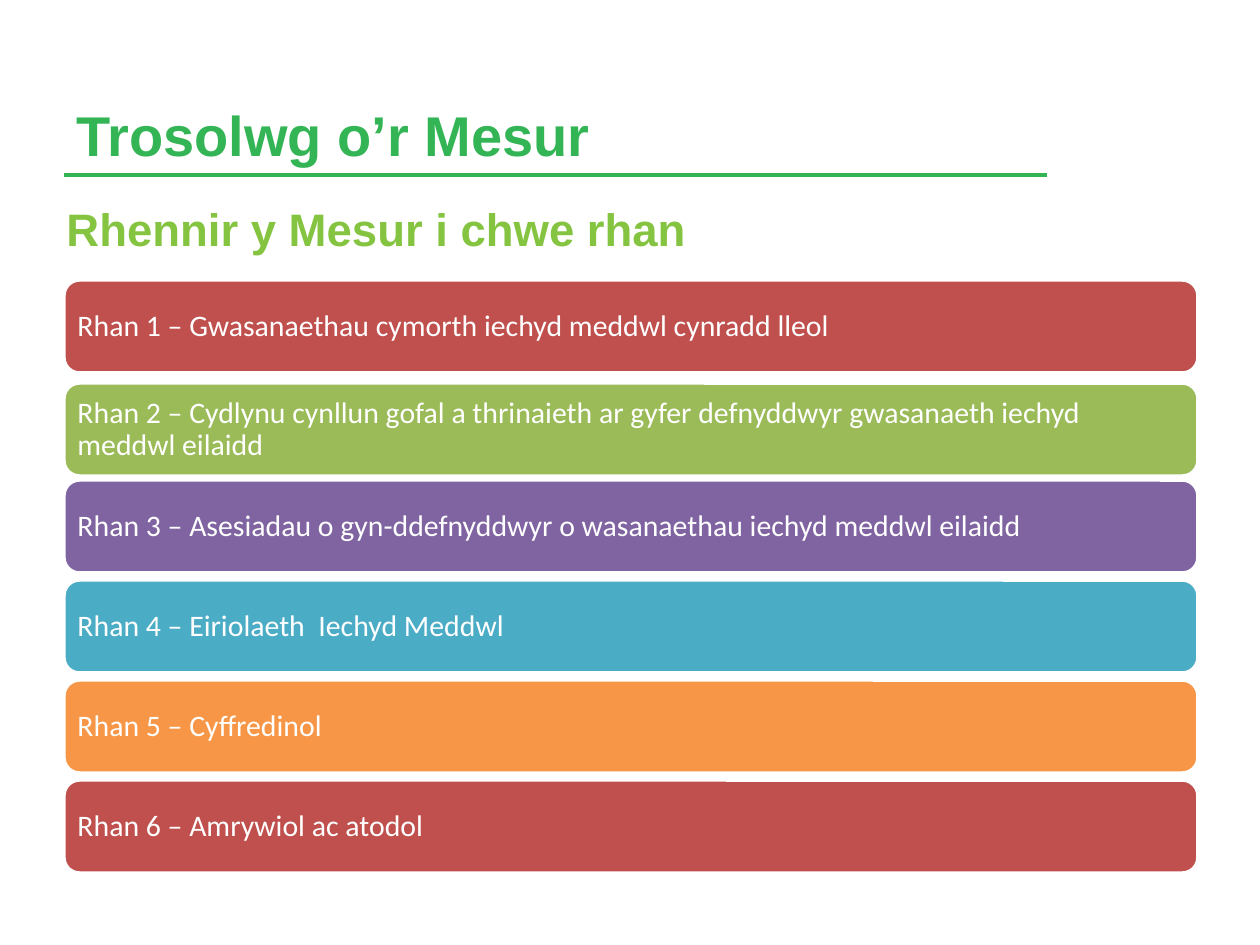
from pptx import Presentation
from pptx.dml.color import RGBColor as RGB
from pptx.enum.shapes import MSO_CONNECTOR as CONN, MSO_SHAPE as SHAPE
from pptx.enum.text import MSO_ANCHOR as ANCHOR, PP_ALIGN as ALIGN
from pptx.oxml.ns import qn
from pptx.util import Emu, Pt
from lxml.etree import SubElement

THEME = {
    "green": "34B555", "lime": "85C441", "white": "FFFFFF",
    "bars": ["C0504D", "9BBB59", "8064A2", "4BACC6", "F79646", "C0504D"],
    "head": "Arial", "body": "Calibri",
    "title": 32, "sub": 26, "part": 17, "line": 2,
}


def px(n):
    return Emu(round(n * 914400 / 126))


def write(frame, text, font, size, tint, bold, anchor):
    frame.text = text
    frame.word_wrap = True
    frame.vertical_anchor = anchor
    para = frame.paragraphs[0]
    para.alignment = ALIGN.LEFT
    for run in para.runs:
        run.font.name = THEME[font]
        run.font.size = Pt(THEME[size])
        run.font.color.rgb = RGB.from_string(THEME[tint])
        run.font.bold = bold
    return para


deck = Presentation()
deck.slide_width, deck.slide_height = px(1260), px(945)
slide = deck.slides.add_slide(deck.slide_layouts[6])
shapes = slide.shapes

rule = shapes.add_connector(CONN.STRAIGHT, px(64), px(175), px(1047), px(175))
rule.line.color.rgb = RGB.from_string(THEME["green"])
rule.line.width = Pt(THEME["line"])
SubElement(rule._element.spPr, qn("a:effectLst"))

title = shapes.add_textbox(px(64), px(37), px(983), px(137))
write(title.text_frame, "Trosolwg o’r Mesur", "head", "title", "green", True, ANCHOR.BOTTOM)

parts = [
    "Gwasanaethau cymorth iechyd meddwl cynradd lleol",
    "Cydlynu cynllun gofal a thrinaieth ar gyfer defnyddwyr gwasanaeth iechyd \vmeddwl eilaidd",
    "Asesiadau o gyn-ddefnyddwyr o wasanaethau iechyd meddwl eilaidd",
    "Eiriolaeth  Iechyd Meddwl",
    "Cyffredinol",
    "Amrywiol ac atodol",
]
tops = [280, 383] + [480 + 100 * i for i in range(4)]

for num, (part, top, tint) in enumerate(zip(parts, tops, THEME["bars"]), 1):
    bar = shapes.add_shape(SHAPE.ROUNDED_RECTANGLE, px(64), px(top), px(1134), px(93))
    bar.shadow.inherit = False
    bar.fill.solid()
    bar.fill.fore_color.rgb = RGB.from_string(tint)
    bar.line.color.rgb = RGB.from_string(THEME["white"])
    bar.line.width = Pt(THEME["line"])
    frame = bar.text_frame
    frame.margin_left = frame.margin_right = px(9)
    frame.margin_top = frame.margin_bottom = px(9)
    para = write(frame, f"Rhan {num} – {part}", "body", "part", "white", False, ANCHOR.MIDDLE)
    para.line_spacing = 0.9

sub = shapes.add_textbox(px(54), px(195), px(1012), px(68))
write(sub.text_frame, "Rhennir y Mesur i chwe rhan", "head", "sub", "lime", True, ANCHOR.TOP)

deck.save("out.pptx")
